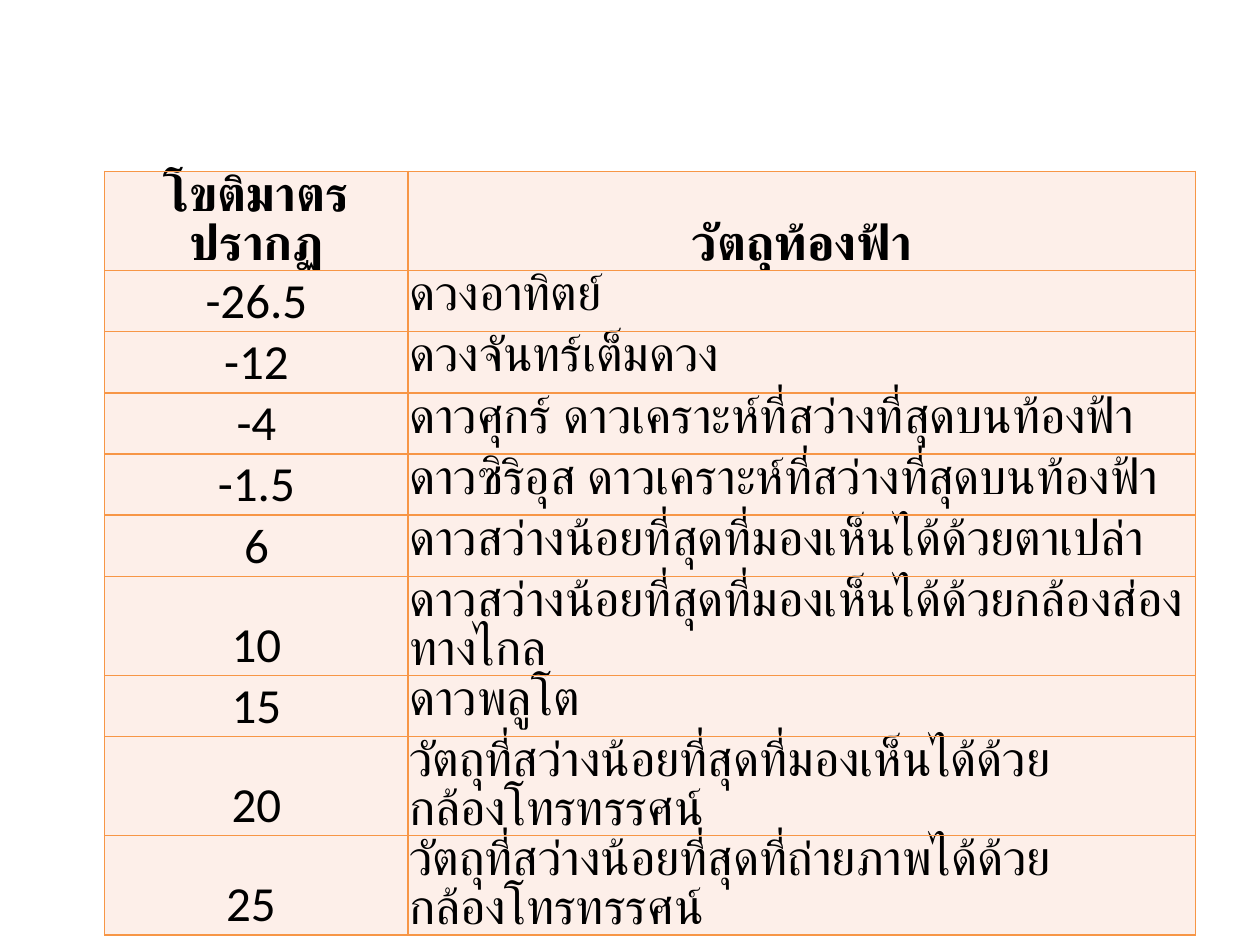
from lxml.etree import SubElement
from pptx import Presentation
from pptx.dml.color import RGBColor
from pptx.enum.lang import MSO_LANGUAGE_ID as Lang
from pptx.enum.text import MSO_ANCHOR as Anchor, PP_ALIGN as Align
from pptx.oxml.ns import qn
from pptx.util import Inches, Pt

BLACK = RGBColor(0x00, 0x00, 0x00)
ORANGE = RGBColor(0xF7, 0x96, 0x46)
PEACH = RGBColor(0xFD, 0xEF, 0xE9)

HEADER = ("โขติมาตรปรากฏ", "วัตถุท้องฟ้า")
MAGNITUDES = [
    ("-26.5", "ดวงอาทิตย์"),
    ("-12", "ดวงจันทร์เต็มดวง"),
    ("-4", "ดาวศุกร์ ดาวเคราะห์ที่สว่างที่สุดบนท้องฟ้า"),
    ("-1.5", "ดาวซิริอุส ดาวเคราะห์ที่สว่างที่สุดบนท้องฟ้า"),
    ("6", "ดาวสว่างน้อยที่สุดที่มองเห็นได้ด้วยตาเปล่า"),
    ("10", "ดาวสว่างน้อยที่สุดที่มองเห็นได้ด้วยกล้องส่องทางไกล"),
    ("15", "ดาวพลูโต"),
    ("20", "วัตถุที่สว่างน้อยที่สุดที่มองเห็นได้ด้วยกล้องโทรทรรศน์"),
    ("25 ", "วัตถุที่สว่างน้อยที่สุดที่ถ่ายภาพได้ด้วยกล้องโทรทรรศน์"),
]
COLUMN_WIDTHS = (2.41, 6.25)
ROW_HEIGHT = 0.2


def set_borders(cell):
    tc_pr = cell._tc.get_or_add_tcPr()
    for i, side in enumerate(("a:lnL", "a:lnR", "a:lnT", "a:lnB")):
        ln = tc_pr.makeelement(qn(side), {"w": str(Pt(1))})
        fill = SubElement(ln, qn("a:solidFill"))
        SubElement(fill, qn("a:srgbClr"), val=str(ORANGE))
        tc_pr.insert(i, ln)


def fill_cell(cell, text, bold, centred):
    cell.fill.solid()
    cell.fill.fore_color.rgb = PEACH
    cell.margin_left = cell.margin_right = cell.margin_top = Inches(0.01)
    cell.margin_bottom = 0
    cell.vertical_anchor = Anchor.BOTTOM if centred else Anchor.TOP
    p = cell.text_frame.paragraphs[0]
    p.text = text
    p.alignment = Align.CENTER if centred else Align.LEFT
    font = p.runs[0].font
    font.name = "Calibri"
    font.size = Pt(28)
    font.bold = bold
    font.color.rgb = BLACK
    font.language_id = Lang.THAI
    set_borders(cell)


def add_magnitude_table(slide):
    rows = [HEADER, *MAGNITUDES]
    table = slide.shapes.add_table(
        len(rows), len(COLUMN_WIDTHS), Inches(0.83), Inches(1.36),
        Inches(sum(COLUMN_WIDTHS)), Inches(ROW_HEIGHT * len(rows)),
    ).table
    table.horz_banding = False
    for column, width in zip(table.columns, COLUMN_WIDTHS):
        column.width = Inches(width)
    for r, row in enumerate(rows):
        table.rows[r].height = Inches(ROW_HEIGHT)
        for c, text in enumerate(row):
            fill_cell(table.cell(r, c), text, bold=r == 0, centred=r == 0 or c == 0)


def main():
    prs = Presentation()
    prs.slide_width, prs.slide_height = Inches(10), Inches(7.5)
    slide = prs.slides.add_slide(prs.slide_layouts[6])
    add_magnitude_table(slide)
    prs.save("out.pptx")


if __name__ == "__main__":
    main()
